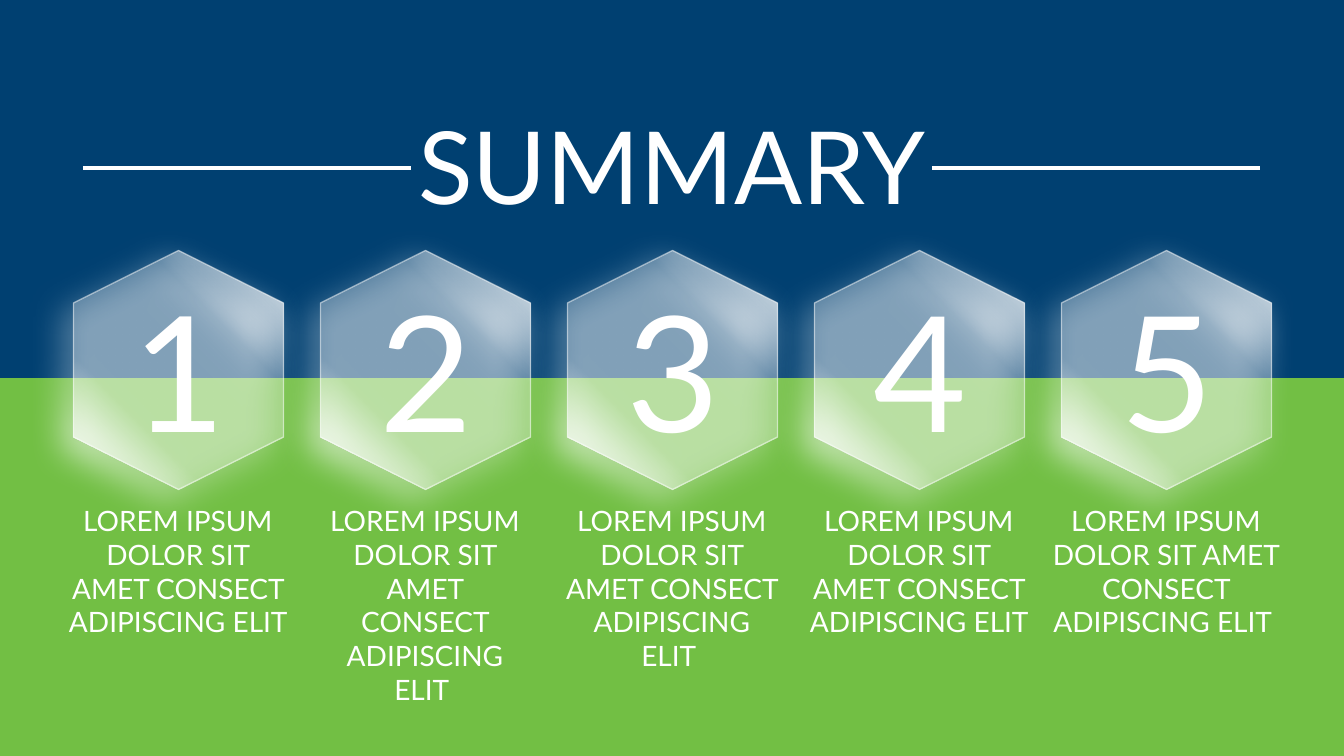
import pptx
import pptx.dml.color
import pptx.enum.shapes
import pptx.enum.text
import pptx.oxml
import pptx.oxml.ns
import pptx.util

WHITE = pptx.dml.color.RGBColor(0xFF, 0xFF, 0xFF)
NAVY = pptx.dml.color.RGBColor(0x00, 0x40, 0x71)
GREEN = pptx.dml.color.RGBColor(0x72, 0xBF, 0x44)
SHAPES = pptx.enum.shapes.MSO_SHAPE
NS = pptx.oxml.ns.nsdecls("a")
qn = pptx.oxml.ns.qn


def px(*lengths):
    return [pptx.util.Emu(round(n * 12192000 / 1344)) for n in lengths]


def add_text(shapes, text, *, box, size, color=WHITE, font="Lato"):
    frame = shapes.add_textbox(*px(*box)).text_frame
    frame.word_wrap = True
    frame.auto_size = pptx.enum.text.MSO_AUTO_SIZE.SHAPE_TO_FIT_TEXT
    paragraph = frame.paragraphs[0]
    paragraph.text = text
    paragraph.alignment = pptx.enum.text.PP_ALIGN.CENTER
    for run in paragraph.runs:
        run.font.size = pptx.util.Pt(size)
        run.font.name = font
        run.font.color.rgb = color


deck = pptx.Presentation()
deck.slide_width, deck.slide_height = px(1344, 756)
slide = deck.slides.add_slide(deck.slide_layouts[6])

# Two background bands
for top, height, color in [(0, 462, NAVY), (378, 378, GREEN)]:
    band = slide.shapes.add_shape(SHAPES.RECTANGLE, *px(0, top, 1344, height))
    band.shadow.inherit = False
    band.fill.solid()
    band.fill.fore_color.rgb = color
    band.line.fill.background()

# Five numbered glass hexagons with captions
CAPTION = "LOREM IPSUM\vDOLOR SIT AMET CONSECT ADIPISCING ELIT "
CAPTION_WIDTHS = [244, 230, 234, 244, 256]
GLASS_STOPS = [(0, 100), (30, 30), (70, 30), (100, 100)]  # position, opacity

for index, caption_width in enumerate(CAPTION_WIDTHS):
    center = 178 + 247 * index
    item = slide.shapes.add_group_shape().shapes
    add_text(item, CAPTION, size=20,
             box=(center - caption_width // 2, 499, caption_width, 146))

    hexagon = item.add_shape(SHAPES.HEXAGON, *px(center - 119, 265, 239, 210))
    hexagon.rotation = 90
    hexagon.fill.gradient()
    hexagon.fill.gradient_angle = 315
    hexagon.line.color.rgb = WHITE
    hexagon.line.width = pptx.util.Pt(1)
    hexagon.shadow.inherit = False

    # Translucent fill and outline, white glow to the lower left
    properties = hexagon._element.spPr
    stops = properties.find(f"{qn('a:gradFill')}/{qn('a:gsLst')}")
    for stop in list(stops):
        stops.remove(stop)
    for position, opacity in GLASS_STOPS:
        stops.append(pptx.oxml.parse_xml(
            f'<a:gs {NS} pos="{position * 1000}"><a:srgbClr val="{WHITE}">'
            f'<a:alpha val="{opacity * 1000}"/></a:srgbClr></a:gs>'))
    outline = properties.find(f"{qn('a:ln')}/{qn('a:solidFill')}/{qn('a:srgbClr')}")
    outline.append(pptx.oxml.parse_xml(f'<a:alpha {NS} val="50000"/>'))
    properties.find(qn("a:effectLst")).append(pptx.oxml.parse_xml(
        f'<a:outerShdw {NS} blurRad="{pptx.util.Pt(24)}" dist="{pptx.util.Pt(11)}" '
        f'dir="{135 * 60000}" algn="ctr" rotWithShape="0">'
        f'<a:srgbClr val="{WHITE}"/></a:outerShdw>'))

    add_text(item, str(index + 1), size=115, box=(center - 118, 267, 238, 206))

# Title between two rules
for left in (83, 932):
    rule = slide.shapes.add_connector(pptx.enum.shapes.MSO_CONNECTOR.STRAIGHT,
                                      *px(left, 168, left + 328, 168))
    rule.line.color.rgb = WHITE
    rule.line.width = pptx.util.Pt(3)
    rule._element.spPr.append(pptx.oxml.parse_xml(f"<a:effectLst {NS}/>"))

add_text(slide.shapes, "SUMMARY", size=72, box=(0, 99, 1344, 132))

deck.save("out.pptx")
